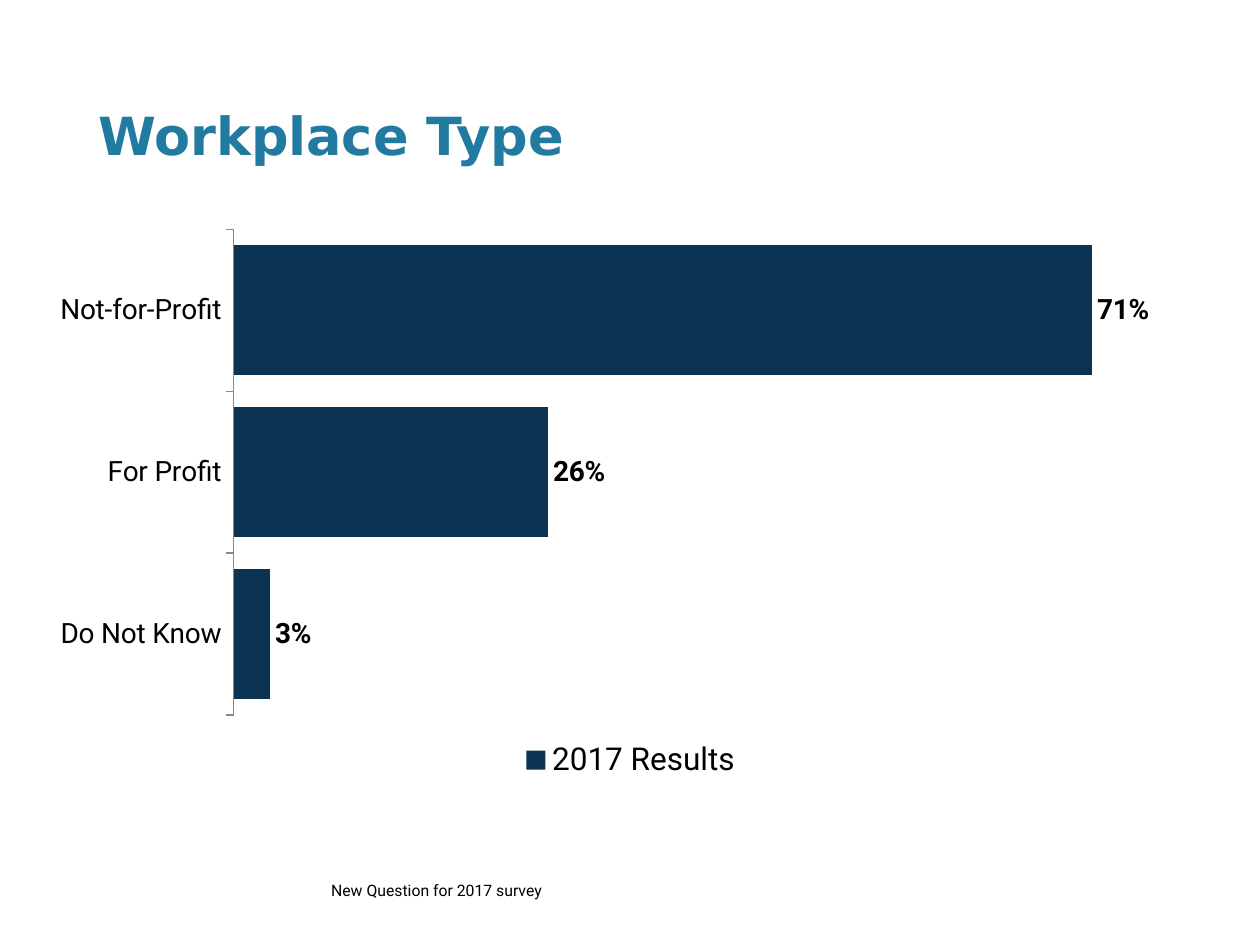
from pptx import Presentation
from pptx.chart.data import CategoryChartData
from pptx.dml.color import RGBColor
from pptx.enum.chart import XL_CHART_TYPE, XL_LABEL_POSITION, XL_LEGEND_POSITION, XL_TICK_MARK
from pptx.enum.text import MSO_ANCHOR
from pptx.util import Inches, Pt

THEME = {
    "title": ("DejaVu Sans", 30, "217AA0", True),
    "legend": ("Roboto", 18, "000000", False),
    "category": ("Roboto", 16, "000000", False),
    "value": ("Roboto", 16, "000000", True),
    "note": ("Roboto", 9, "000000", False),
    "bar": RGBColor.from_string("0C3351"),
    "axis": RGBColor.from_string("888888"),
}


def set_font(font, role):
    font.name, size, color, font.bold = THEME[role]
    font.size = Pt(size)
    font.color.rgb = RGBColor.from_string(color)


def add_text(s, text, role, left, top, width, height):
    sp = s.shapes.add_textbox(Inches(left), Inches(top), Inches(width), Inches(height))
    tf = sp.text_frame
    tf.word_wrap = True
    p = tf.paragraphs[0]
    p.text = text
    set_font(p.font, role)
    return tf


prs = Presentation()
prs.slide_width, prs.slide_height = Inches(10), Inches(7.5)
s = prs.slides.add_slide(prs.slide_layouts[6])

tf = add_text(s, "Workplace Type", "title", 0.78, 0.63, 9.07, 0.88)
tf.margin_left = 0
tf.vertical_anchor = MSO_ANCHOR.MIDDLE

data = CategoryChartData(number_format="0%")
data.categories = ["Do Not Know", "For Profit", "Not-for-Profit"]
data.add_series("2017 Results", [0.03, 0.26, 0.71])
chart = s.shapes.add_chart(
    XL_CHART_TYPE.BAR_CLUSTERED, Inches(0.29), Inches(1.73), Inches(9.43), Inches(4.5), data
).chart
chart.has_title = False
set_font(chart.font, "legend")
chart.has_legend = True
chart.legend.position = XL_LEGEND_POSITION.BOTTOM
chart.legend.include_in_layout = False
set_font(chart.legend.font, "legend")

axis = chart.category_axis
axis.major_tick_mark = XL_TICK_MARK.OUTSIDE
axis.format.line.color.rgb = THEME["axis"]
axis.format.line.width = Pt(0.75)
set_font(axis.tick_labels.font, "category")

axis = chart.value_axis
axis.minimum_scale, axis.maximum_scale = 0, 0.8
axis.has_major_gridlines = False
axis.visible = False

plot = chart.plots[0]
plot.gap_width = 25
plot.vary_by_categories = False
fill = plot.series[0].format.fill
fill.solid()
fill.fore_color.rgb = THEME["bar"]
plot.has_data_labels = True
labels = plot.data_labels
labels.show_value = True
labels.number_format = "0%"
labels.number_format_is_linked = False
labels.position = XL_LABEL_POSITION.OUTSIDE_END
set_font(labels.font, "value")

add_text(s, "New Question for 2017 survey", "note", 2.53, 6.94, 4.28, 0.25)

prs.save("out.pptx")
